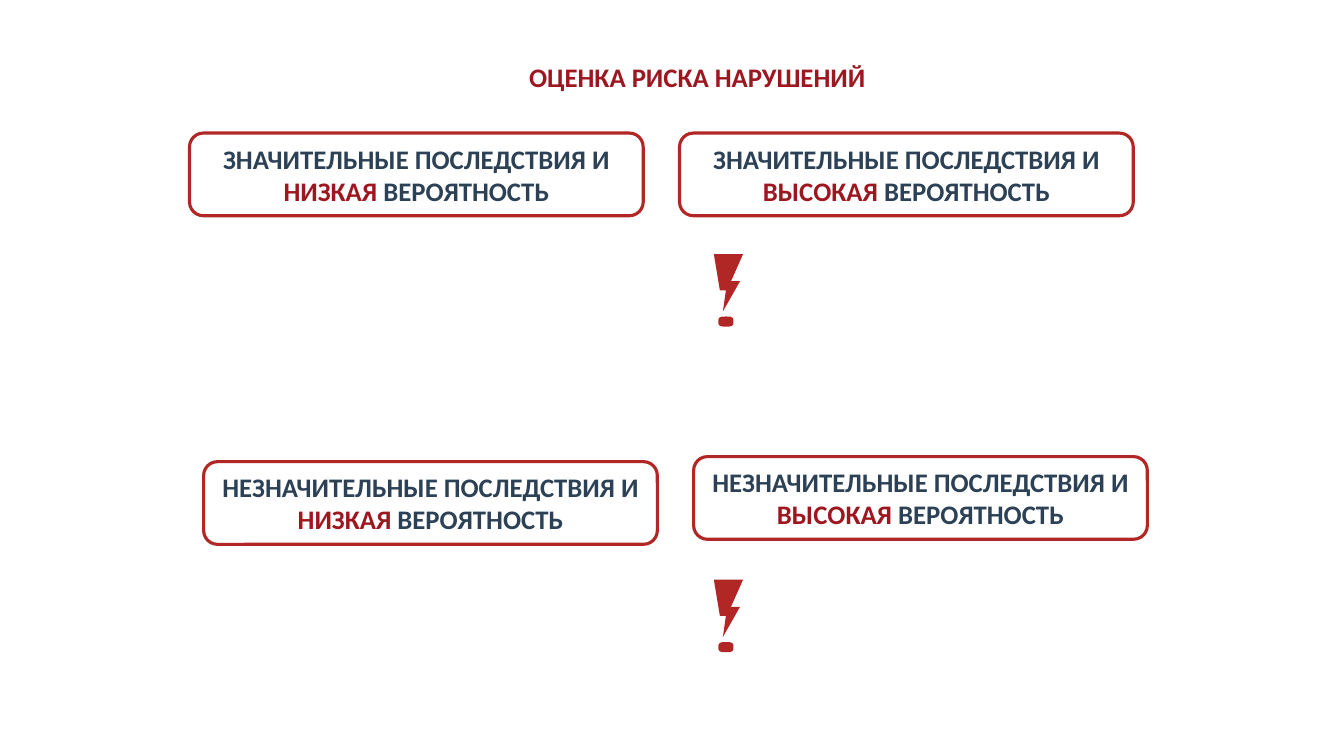
import math
from dataclasses import dataclass

import pptx
import pptx.dml.color
import pptx.enum.shapes
import pptx.enum.text
import pptx.util

Inches = pptx.util.Inches


@dataclass(frozen=True)
class Theme:
    font: str = "Calibri"
    size: float = 19.1
    edge: float = 2.25
    dark: str = "2C4155"
    accent: str = "9D1720"
    red: str = "B12726"


def rgb(code):
    return pptx.dml.color.RGBColor.from_string(code)


def write(frame, *runs, font, size, bold=True):
    """Fill a frame with one centred paragraph of (text, colour) runs."""
    frame.word_wrap = True
    frame.auto_size = pptx.enum.text.MSO_AUTO_SIZE.SHAPE_TO_FIT_TEXT
    para = frame.paragraphs[0]
    para.alignment = pptx.enum.text.PP_ALIGN.CENTER
    for text, color in runs:
        run = para.add_run()
        run.text = text
        run.font.name = font
        run.font.size = pptx.util.Pt(size)
        run.font.bold = bold
        run.font.color.rgb = rgb(color)


class Board:
    """Draw the elements of one slide in one style."""

    def __init__(self, slide, theme):
        self.shapes = slide.shapes
        self.theme = theme

    def title(self, text, left, top, width, height):
        box = self.shapes.add_textbox(*map(Inches, (left, top, width, height)))
        look = self.theme
        write(box.text_frame, (text, look.accent), font=look.font, size=look.size)

    def card(self, impact, chance, left, top, width=4.5, height=0.82):
        look = self.theme
        card = self.shapes.add_shape(
            pptx.enum.shapes.MSO_SHAPE.ROUNDED_RECTANGLE,
            *map(Inches, (left, top, width, height)))
        card.shadow.inherit = False
        card.fill.background()
        card.line.color.rgb = rgb(look.red)
        card.line.width = pptx.util.Pt(look.edge)
        card.text_frame.vertical_anchor = pptx.enum.text.MSO_ANCHOR.MIDDLE
        write(card.text_frame,
              (f"{impact} ПОСЛЕДСТВИЯ И ", look.dark),
              (f"{chance} ", look.accent),
              ("ВЕРОЯТНОСТЬ", look.dark),
              font=look.font, size=look.size)

    def alert(self, left, top):
        """Draw an exclamation mark: a bolt above a rounded dot."""
        bolt = [(0, 0), (0.29, 0), (0.17, 0.27), (0.26, 0.27),
                (0.09, 0.57), (0.12, 0.36), (0.06, 0.36)]
        dot = []
        for step in range(48):
            turn = math.tau * step / 48
            cos, sin = math.cos(turn), math.sin(turn)
            dot.append((0.12 + 0.075 * math.copysign(abs(cos) ** 0.6, cos),
                        0.67 + 0.05 * math.copysign(abs(sin) ** 0.6, sin)))
        bolt, dot = ([(Inches(left + x), Inches(top + y)) for x, y in part]
                     for part in (bolt, dot))
        pen = self.shapes.build_freeform(*bolt[0])
        pen.add_line_segments(bolt[1:], close=True)
        pen.move_to(*dot[0])
        pen.add_line_segments(dot[1:], close=True)
        mark = pen.convert_to_shape()
        mark.shadow.inherit = False
        mark.fill.solid()
        mark.fill.fore_color.rgb = rgb(self.theme.red)
        mark.line.fill.background()


def main():
    deck = pptx.Presentation()
    deck.slide_width, deck.slide_height = Inches(13.33), Inches(7.5)
    board = Board(deck.slides.add_slide(deck.slide_layouts[6]), Theme())
    board.title("ОЦЕНКА РИСКА НАРУШЕНИЙ", 2.38, 0.55, 9.07, 0.42)
    rows = [("ЗНАЧИТЕЛЬНЫЕ", 1.88, (1.32, 1.32)),
            ("НЕЗНАЧИТЕЛЬНЫЕ", 2.02, (4.58, 4.53))]
    for impact, left, tops in rows:
        for col, chance in enumerate(("НИЗКАЯ", "ВЫСОКАЯ")):
            board.card(impact, chance, left + 4.86 * col, tops[col])
    for top in (2.52, 5.75):
        board.alert(7.08, top)
    deck.save("out.pptx")


if __name__ == "__main__":
    main()
